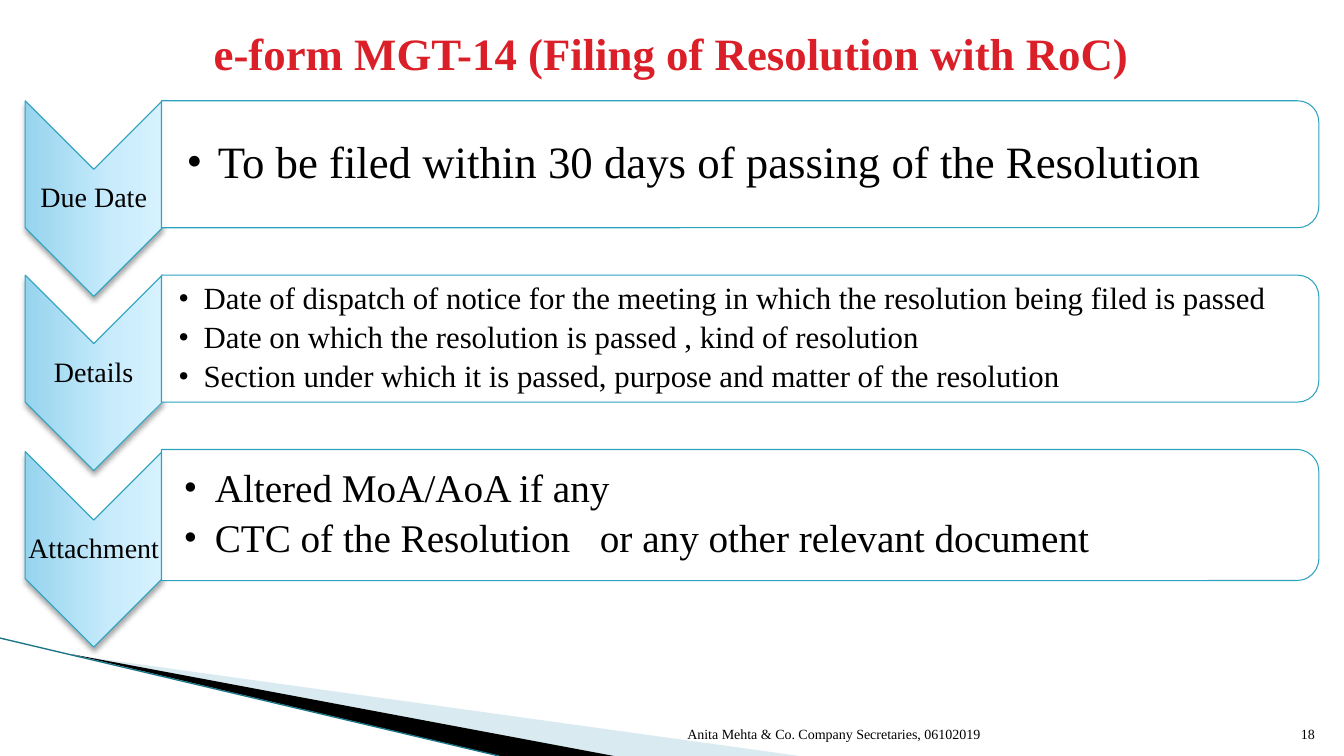
from lxml.etree import SubElement
from pptx import Presentation
from pptx.dml.color import RGBColor
from pptx.enum.shapes import MSO_CONNECTOR, MSO_SHAPE
from pptx.enum.text import MSO_ANCHOR, MSO_AUTO_SIZE, PP_ALIGN
from pptx.oxml import parse_xml
from pptx.oxml.ns import nsdecls, qn
from pptx.util import Inches, Pt

# Content
TITLE = "e-form MGT-14 (Filing of Resolution with RoC)"
FOOTER = "Anita Mehta & Co. Company Secretaries, 06102019"
PAGE_NUMBER = "18"
STEPS = [
    {"label": "Due Date", "size": 32, "inset": 0.25, "hanging": 0.31, "height": 1.26,
     "points": ["To be filed within 30 days of passing of the Resolution"]},
    {"label": "Details", "size": 22, "inset": 0.17, "hanging": 0.25, "height": 1.26,
     "points": ["Date of dispatch of notice for the meeting in which the resolution being filed is passed",
                "Date on which the resolution is passed , kind of resolution",
                "Section under which it is passed, purpose and matter of the resolution"]},
    {"label": "Attachment", "size": 28, "inset": 0.22, "hanging": 0.31, "height": 1.3,
     "points": ["Altered MoA/AoA if any",
                "CTC of the Resolution\tor any other relevant document"]},
]

# Look
FONT = "Times New Roman"
COLORS = {"title": "DA1F28", "text": "000000", "outline": "2DA2BF", "panel": "FFFFFF",
          "band": "A0CBDC", "wedge": "000000", "edge": "1B7587"}
CHEVRON_STOPS = [(0, "96D4EE"), (65, "C9ECFC"), (100, "D7F2FF")]

# Grid, in inches
WIDTH, HEIGHT = 13.33, 7.5
FIRST_ROW, ROW_PITCH = 1.0, 1.73
CHEVRON_LEFT, CHEVRON_WIDTH, CHEVRON_LENGTH = 0.25, 1.36, 1.94
CHEVRON_DROP = 0.34
PANEL_LEFT, PANEL_WIDTH, PANEL_MARGIN = 1.6, 11.48, 0.06
LABEL_HEIGHT = 0.58
TAB_STOP = 4.13


def rgb(name):
    return RGBColor.from_string(COLORS[name])


def place(shape, left, top, width, height):
    shape.left, shape.top = Inches(left), Inches(top)
    shape.width, shape.height = Inches(width), Inches(height)


def add_bullet(paragraph, hanging):
    properties = paragraph._p.get_or_add_pPr()
    properties.set("marL", str(Inches(hanging)))
    properties.set("indent", str(-Inches(hanging)))
    SubElement(properties, qn("a:buFont"), typeface=FONT)
    SubElement(properties, qn("a:buChar"), char="•")
    if "\t" in paragraph.text:
        tabs = SubElement(properties, qn("a:tabLst"))
        SubElement(tabs, qn("a:tab"), pos=str(Inches(TAB_STOP)), algn="l")


def write(shape, lines, size, color="text", bold=False, align=PP_ALIGN.LEFT,
          anchor=MSO_ANCHOR.MIDDLE, insets=(0.1, 0.05, 0.1, 0.05), hanging=None,
          line_spacing=1.0, space_after=0):
    frame = shape.text_frame
    frame.text = "\n".join(lines)
    frame.word_wrap = True
    frame.auto_size = MSO_AUTO_SIZE.NONE
    frame.vertical_anchor = anchor
    (frame.margin_left, frame.margin_top,
     frame.margin_right, frame.margin_bottom) = map(Inches, insets)
    for paragraph in frame.paragraphs:
        if hanging:
            add_bullet(paragraph, hanging)
        paragraph.alignment = align
        paragraph.line_spacing = line_spacing
        paragraph.space_before = Pt(0)
        paragraph.space_after = Pt(space_after)
        for run in paragraph.runs:
            run.font.name, run.font.size, run.font.bold = FONT, Pt(size), bold
            run.font.color.rgb = rgb(color)


def add_text(slide, box, lines, size, **style):
    write(slide.shapes.add_textbox(*map(Inches, box)), lines, size, **style)


def set_alpha(shape, percent):
    color = shape._element.spPr.find(qn("a:solidFill"))[0]
    SubElement(color, qn("a:alpha"), val=str(percent * 1000))


def add_turned(slide, preset, center_x, center_y, length, breadth):
    """Add a shape turned a quarter, with its length given before the turn."""
    shape = slide.shapes.add_shape(preset, *map(Inches, (
        center_x - length / 2, center_y - breadth / 2, length, breadth)))
    shape.rotation = 90
    shape.shadow.inherit = False
    shape.line.color.rgb = rgb("outline")
    shape.line.width = Pt(0.75)
    return shape


def add_chevron(slide, center_y):
    chevron = add_turned(slide, MSO_SHAPE.CHEVRON, CHEVRON_LEFT + CHEVRON_WIDTH / 2,
                         center_y, CHEVRON_LENGTH, CHEVRON_WIDTH)
    stops = "".join(f'<a:gs pos="{position * 1000}"><a:srgbClr val="{color}"/></a:gs>'
                    for position, color in CHEVRON_STOPS)
    chevron._element.spPr.find(qn("a:prstGeom")).addnext(parse_xml(
        f'<a:gradFill {nsdecls("a")} rotWithShape="1"><a:gsLst>{stops}</a:gsLst>'
        '<a:lin ang="16200000" scaled="0"/></a:gradFill>'))
    chevron._element.spPr.find(qn("a:effectLst")).append(parse_xml(
        f'<a:outerShdw {nsdecls("a")} blurRad="{Pt(4)}" dist="{Pt(3)}" dir="5400000" '
        'rotWithShape="0"><a:srgbClr val="000000"><a:alpha val="35000"/></a:srgbClr>'
        '</a:outerShdw>'))


def add_corner(slide):
    wedges = [("band", [(0.73, 6.5), (7.93, HEIGHT), (6.08, HEIGHT)]),
              ("wedge", [(0.71, 6.49), (6.09, HEIGHT), (4.96, HEIGHT)])]
    for color, points in wedges:
        builder = slide.shapes.build_freeform(*map(Inches, points[0]))
        builder.add_line_segments([tuple(map(Inches, point)) for point in points[1:]])
        wedge = builder.convert_to_shape()
        wedge.shadow.inherit = False
        wedge.fill.solid()
        wedge.fill.fore_color.rgb = rgb(color)
        wedge.line.fill.background()
        if color == "band":
            set_alpha(wedge, 40)
    edge = slide.shapes.add_connector(MSO_CONNECTOR.STRAIGHT,
                                      *map(Inches, (0, 6.33, 4.95, HEIGHT)))
    edge.line.color.rgb = rgb("edge")
    edge.line.width = Pt(0.95)
    SubElement(edge._element.spPr, qn("a:effectLst"))


def add_step(slide, row, step, body):
    top, height = FIRST_ROW + row * ROW_PITCH, step["height"]
    middle = top + height / 2
    add_chevron(slide, middle + CHEVRON_DROP)
    add_text(slide, (CHEVRON_LEFT, middle + CHEVRON_DROP - LABEL_HEIGHT / 2,
                     CHEVRON_WIDTH, LABEL_HEIGHT), [step["label"]], 20,
             align=PP_ALIGN.CENTER, insets=(0.01,) * 4, line_spacing=0.9, space_after=7)
    panel = add_turned(slide, MSO_SHAPE.ROUND_2_SAME_RECTANGLE,
                       PANEL_LEFT + PANEL_WIDTH / 2, middle, height, PANEL_WIDTH)
    panel.fill.solid()
    panel.fill.fore_color.rgb = rgb("panel")
    set_alpha(panel, 90)
    # The list stands in front of its panel
    slide.shapes._spTree.append(body._element)
    place(body, PANEL_LEFT, top + PANEL_MARGIN, PANEL_WIDTH - PANEL_MARGIN,
          height - 2 * PANEL_MARGIN)
    write(body, step["points"], step["size"], hanging=step["hanging"],
          insets=(step["inset"], 0.02, 0.02, 0.02), line_spacing=0.9,
          space_after=round(step["size"] * 0.19, 1))


def main():
    presentation = Presentation()
    presentation.slide_width, presentation.slide_height = Inches(WIDTH), Inches(HEIGHT)
    slide = presentation.slides.add_slide(
        presentation.slide_layouts.get_by_name("Comparison"))
    title, *bodies = slide.placeholders
    add_corner(slide)
    for row, (step, body) in enumerate(zip(STEPS, bodies)):
        add_step(slide, row, step, body)
    for spare in bodies[len(STEPS):]:
        slide.shapes._spTree.remove(spare._element)

    # Title and footer
    place(title, 0.66, 0.17, 12, 0.7)
    write(title, [TITLE], 32, color="title", bold=True, align=PP_ALIGN.CENTER)
    for text, left, width in [(FOOTER, 6.39, 3.43), (PAGE_NUMBER, 12.61, 0.53)]:
        add_text(slide, (left, 7.01, width, 0.4), [text], 10,
                 align=PP_ALIGN.RIGHT, anchor=MSO_ANCHOR.BOTTOM)
    presentation.save("out.pptx")


if __name__ == "__main__":
    main()
